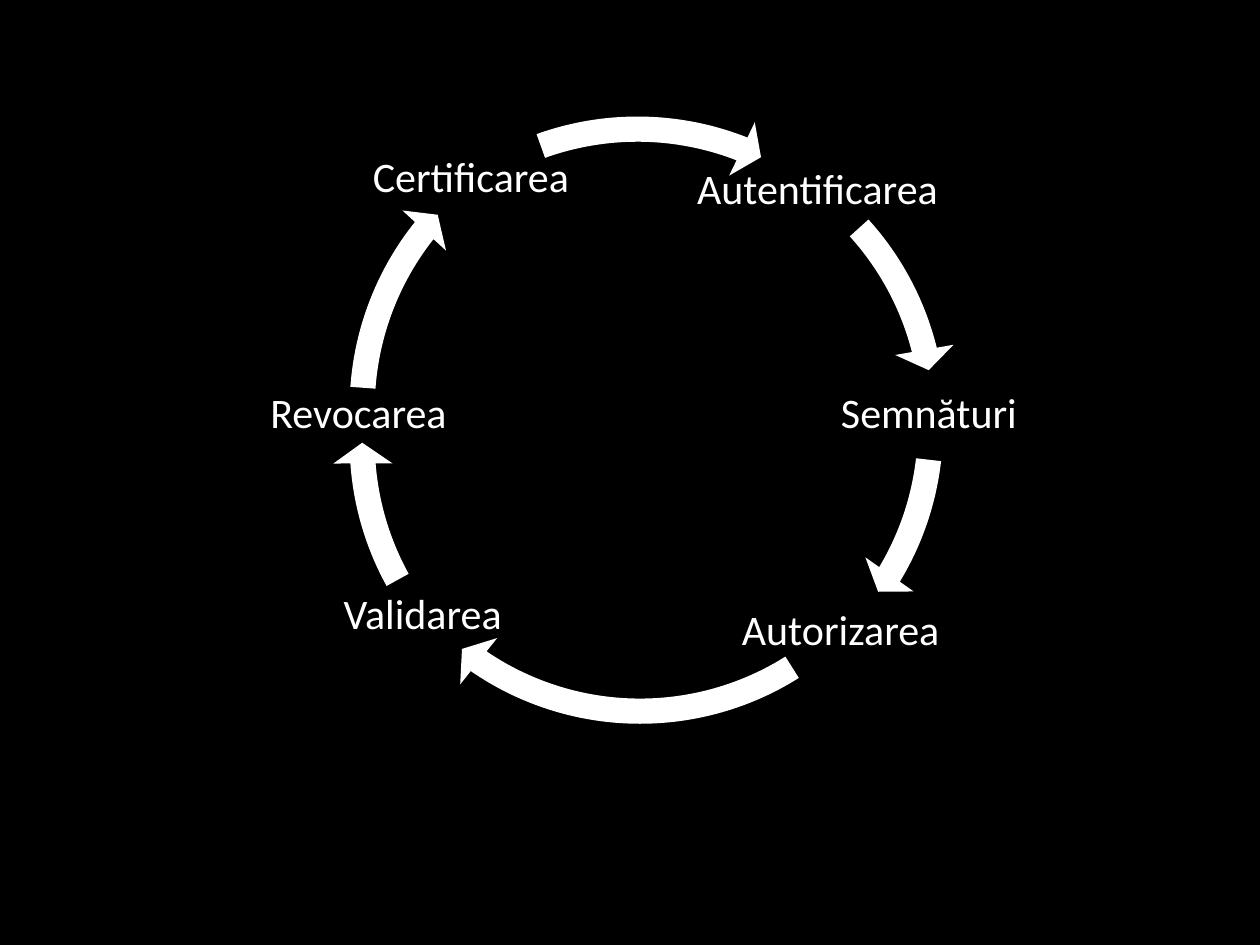
from pptx import Presentation
from pptx.dml.color import RGBColor
from pptx.enum.shapes import MSO_SHAPE as Shape
from pptx.enum.text import MSO_ANCHOR as Anchor, PP_ALIGN as Align
from pptx.util import Inches, Pt

BLACK = "000000"
WHITE = "FFFFFF"
RING_SIZE = 5
UNITS_PER_DEGREE = 0.6

STAGES = [
    ("Autentificarea ", (5.08, 1.23, 2.89, 0.57), (2.64, 0.83), (317.84, 345.88)),
    ("Semnături ", (6.5, 2.94, 1.82, 0.71), (2.62, 0.89), (6.56, 31.07)),
    ("Autorizarea ", (5.53, 4.71, 2.36, 0.61), (2.58, 0.88), (57.79, 124.42)),
    ("Validarea", (2.42, 4.61, 1.87, 0.56), (2.64, 1.01), (151.15, 175.72)),
    ("Revocarea", (1.67, 3.08, 2.35, 0.43), (2.64, 0.74), (184.11, 218.5)),
    ("Certificarea ", (2.79, 1.14, 1.97, 0.56), (2.56, 0.79), (250.2, 291.48)),
]


def paint(fill, color):
    fill.solid()
    fill.fore_color.rgb = RGBColor.from_string(color)


def add_label(slide, stage, bounds):
    label = slide.shapes.add_textbox(*map(Inches, bounds))
    frame = label.text_frame
    frame.word_wrap = True
    frame.vertical_anchor = Anchor.MIDDLE
    frame.margin_left = frame.margin_right = Inches(0.03)
    frame.margin_top = frame.margin_bottom = Inches(0.03)
    frame.text = stage
    paragraph = frame.paragraphs[0]
    paragraph.alignment = Align.CENTER
    paragraph.line_spacing = 0.9
    font = paragraph.runs[0].font
    font.name = "Calibri"
    font.size = Pt(24)
    paint(font.fill, WHITE)


def add_arc_arrow(slide, corner, start_angle, end_angle):
    arrow = slide.shapes.add_shape(
        Shape.CIRCULAR_ARROW, *map(Inches, (*corner, RING_SIZE, RING_SIZE))
    )
    arrow.shadow.inherit = False
    paint(arrow.fill, WHITE)
    arrow.line.fill.background()
    thickness, head_angle, head_width = 0.04, 2.5, 0.047
    settings = (
        thickness,
        head_angle,
        end_angle * UNITS_PER_DEGREE,
        start_angle * UNITS_PER_DEGREE,
        head_width,
    )
    for index, value in enumerate(settings):
        arrow.adjustments[index] = value


def main():
    presentation = Presentation()
    presentation.slide_width = Inches(10)
    presentation.slide_height = Inches(7.5)
    slide = presentation.slides.add_slide(presentation.slide_layouts[6])
    paint(slide.background.fill, BLACK)
    for stage, bounds, ring_corner, angles in STAGES:
        add_label(slide, stage, bounds)
        add_arc_arrow(slide, ring_corner, *angles)
    presentation.save("out.pptx")


if __name__ == "__main__":
    main()
